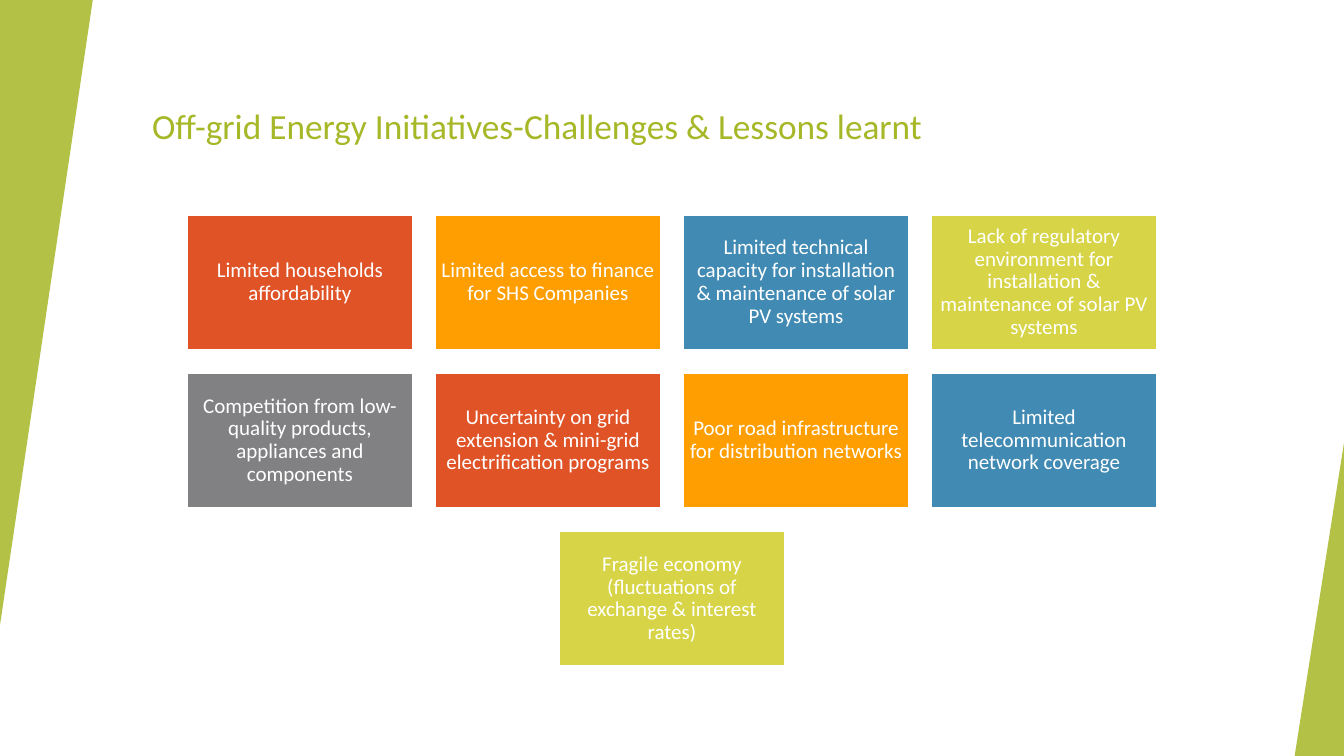
import dataclasses

import lxml.etree
import pptx
import pptx.dml.color
import pptx.enum.shapes
import pptx.enum.text
import pptx.oxml.ns
import pptx.util

Inches = pptx.util.Inches
Pt = pptx.util.Pt
SHAPE = pptx.enum.shapes.MSO_SHAPE
ALIGN = pptx.enum.text.PP_ALIGN
MIDDLE = pptx.enum.text.MSO_ANCHOR.MIDDLE

COLORS = {
    "lime": "A6B727",
    "red": "DF5327",
    "orange": "FE9E00",
    "blue": "418AB3",
    "yellow": "D7D447",
    "gray": "818183",
    "white": "FFFFFF",
}
CYCLE = ["red", "orange", "blue", "yellow", "gray"]
FONT = "Calibri"

# Tile grid, in inches
WIDTH, HEIGHT = 13.33, 7.5
COLS = 4
TILE_W, TILE_H = 2.24, 1.34
STEP_X, STEP_Y = 2.46, 1.57
TOP = 2.13

ISSUES = [
    "Limited households affordability",
    "Limited access to finance for SHS Companies",
    "Limited technical capacity for installation & maintenance of solar PV systems",
    "Lack of regulatory environment for installation & maintenance of solar PV systems",
    "Competition from low-quality products, appliances and components",
    "Uncertainty on grid extension & mini-grid electrification programs",
    "Poor road infrastructure for distribution networks",
    "Limited telecommunication network coverage",
    "Fragile economy (fluctuations of exchange & interest rates)",
]


@dataclasses.dataclass
class Wedge:
    left: float
    top: float
    width: float
    height: float
    turn: int


@dataclasses.dataclass
class Tile:
    left: float
    top: float
    color: str
    text: str


WEDGES = [Wedge(0, 0, 0.92, 6.2, 180), Wedge(12.84, 4.39, 0.49, 3.11, 0)]


def rgb(name: str) -> pptx.dml.color.RGBColor:
    return pptx.dml.color.RGBColor.from_string(COLORS[name])


def write(frame, text: str, size: float, color: str, align) -> None:
    frame.word_wrap = True
    frame.vertical_anchor = MIDDLE
    para = frame.paragraphs[0]
    para.text = text
    para.alignment = align
    para.line_spacing = 0.9
    para.font.name = FONT
    para.font.size = Pt(size)
    para.font.color.rgb = rgb(color)


def draw_wedge(slide, wedge: Wedge) -> None:
    shape = slide.shapes.add_shape(
        SHAPE.ISOSCELES_TRIANGLE, Inches(wedge.left), Inches(wedge.top),
        Inches(wedge.width), Inches(wedge.height))
    shape.adjustments[0] = 1
    shape.rotation = wedge.turn
    shape.shadow.inherit = False
    shape.fill.solid()
    shape.fill.fore_color.rgb = rgb("lime")
    shape.line.fill.background()
    # Make the fill 85% opaque
    tone = shape.fill._xPr.find(".//" + pptx.oxml.ns.qn("a:srgbClr"))
    lxml.etree.SubElement(tone, pptx.oxml.ns.qn("a:alpha"), val="85000")


def draw_tile(slide, tile: Tile) -> None:
    shape = slide.shapes.add_shape(
        SHAPE.RECTANGLE, Inches(tile.left), Inches(tile.top),
        Inches(TILE_W), Inches(TILE_H))
    shape.shadow.inherit = False
    shape.fill.solid()
    shape.fill.fore_color.rgb = rgb(tile.color)
    shape.line.color.rgb = rgb("white")
    shape.line.width = Pt(1.5)
    frame = shape.text_frame
    frame.margin_left = frame.margin_right = Inches(0.06)
    frame.margin_top = frame.margin_bottom = Inches(0.06)
    write(frame, tile.text, 15, "white", ALIGN.CENTER)


def place_tiles() -> list[Tile]:
    """Fill rows from the left, centring each row on the slide."""
    tiles = []
    for num, text in enumerate(ISSUES):
        row, col = divmod(num, COLS)
        count = min(COLS, len(ISSUES) - row * COLS)
        start = (WIDTH - TILE_W - (count - 1) * STEP_X) / 2
        color = CYCLE[num % len(CYCLE)]
        tiles.append(Tile(start + col * STEP_X, TOP + row * STEP_Y, color, text))
    return tiles


def main() -> None:
    deck = pptx.Presentation()
    deck.slide_width = Inches(WIDTH)
    deck.slide_height = Inches(HEIGHT)
    slide = deck.slides.add_slide(deck.slide_layouts[6])
    slide.background.fill.solid()
    slide.background.fill.fore_color.rgb = rgb("white")

    # Title
    title = slide.shapes.add_textbox(
        Inches(1.41), Inches(0.67), Inches(11.15), Inches(1.2))
    write(title.text_frame, "Off-grid Energy Initiatives-Challenges & Lessons learnt",
          25.2, "lime", ALIGN.LEFT)

    # Side wedges
    for wedge in WEDGES:
        draw_wedge(slide, wedge)

    # Challenge tiles
    for tile in place_tiles():
        draw_tile(slide, tile)

    deck.save("out.pptx")


if __name__ == "__main__":
    main()
